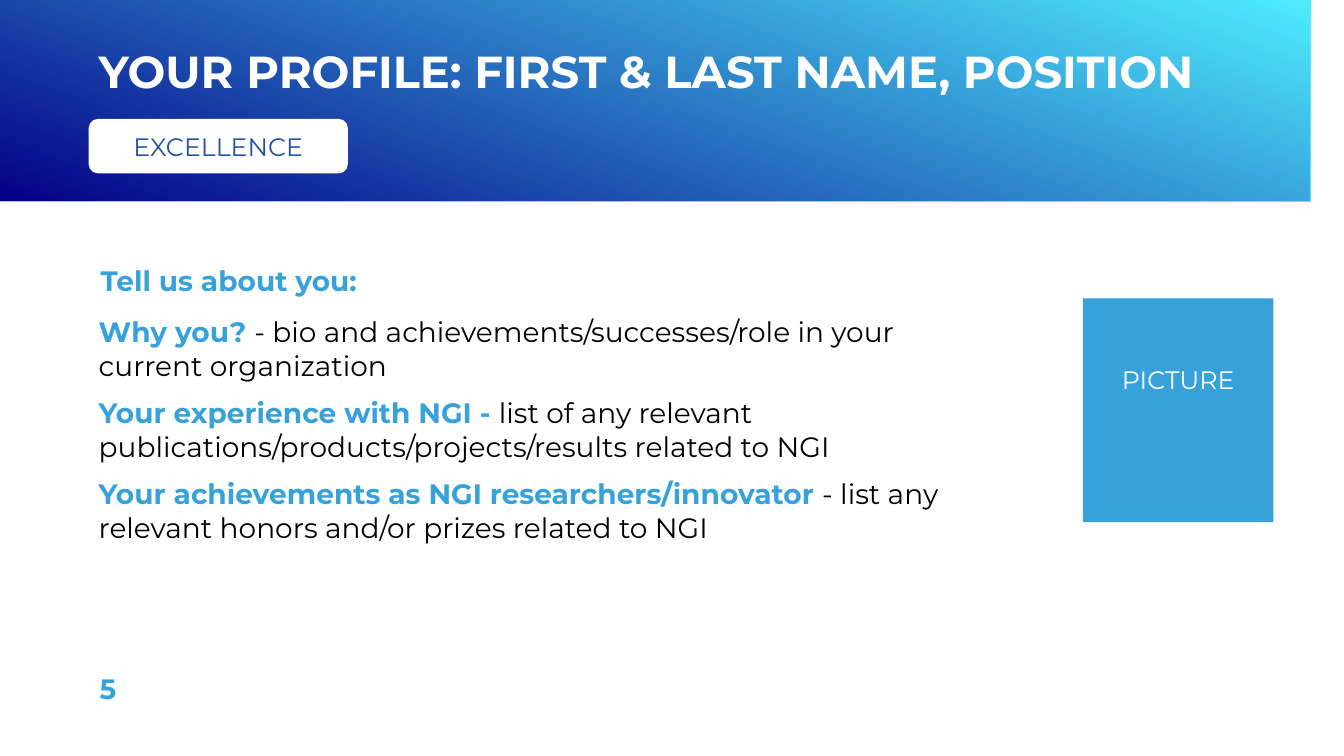
import pptx
import pptx.dml.color
import pptx.enum.shapes
import pptx.enum.text
import pptx.util

Inches = pptx.util.Inches
Pt = pptx.util.Pt
ANCHOR = pptx.enum.text.MSO_ANCHOR
ALIGN = pptx.enum.text.PP_ALIGN
SHAPE = pptx.enum.shapes.MSO_SHAPE

FONT = "Montserrat"
WHITE, BLACK = "FFFFFF", "000000"
SKY, CYAN, NAVY, ROYAL = "37A2D9", "4FECFF", "040086", "2053A6"
SLIDE_WIDTH, SLIDE_HEIGHT = 13.33, 7.5

TOPICS = [
    ("Why you? ", "- bio and achievements/successes/role in your current organization"),
    ("Your experience with NGI - ",
     "list of any relevant publications/products/projects/results related to NGI"),
    ("Your achievements as NGI researchers/innovator ",
     "- list any relevant honors and/or prizes related to NGI"),
]


def color(hex_code):
    """Return the RGB colour for a hex string."""
    return pptx.dml.color.RGBColor.from_string(hex_code)


def style_font(font, size, hex_code, bold=False):
    """Set typeface, size, colour and weight of a font."""
    font.name = FONT
    font.size = Pt(size)
    font.bold = bold
    font.color.rgb = color(hex_code)


def add_text_box(page, box, anchor):
    """Add an empty wrapping text box and return its text frame."""
    frame = page.shapes.add_textbox(*map(Inches, box)).text_frame
    frame.word_wrap = True
    frame.vertical_anchor = anchor
    return frame


def add_line(page, box, text, size, hex_code, anchor):
    """Add a text box holding one bold line."""
    frame = add_text_box(page, box, anchor)
    para = frame.paragraphs[0]
    para.text = text
    style_font(para.font, size, hex_code, True)
    return frame


def add_label(page, preset, box, text, fill, hex_code, anchor):
    """Add a filled shape with a centred label."""
    shape = page.shapes.add_shape(preset, *map(Inches, box))
    shape.shadow.inherit = False
    shape.fill.solid()
    shape.fill.fore_color.rgb = color(fill)
    shape.line.fill.background()
    frame = shape.text_frame
    frame.word_wrap = True
    frame.vertical_anchor = anchor
    para = frame.paragraphs[0]
    para.text = text
    para.alignment = ALIGN.CENTER
    style_font(para.font, 18, hex_code)
    return frame


def add_banner(page, box):
    """Draw the gradient banner with its pointer, title and tag."""
    left, top, width, height = box
    edge = top + 2.06
    tip = top + height
    points = [
        (left, top), (left, edge), (left + 2.18, edge),
        (left + 2.6, tip - 0.01), (left + 2.64, tip), (left + 2.66, tip),
        (left + 2.7, tip - 0.01), (left + 3.11, edge), (left + width, edge),
    ]
    builder = page.shapes.build_freeform(left + width, top, scale=Inches(1))
    builder.add_line_segments(points, close=True)
    banner = builder.convert_to_shape()
    banner.shadow.inherit = False
    banner.fill.gradient()
    banner.fill.gradient_angle = 250
    for stop, hex_code in zip(banner.fill.gradient_stops, (CYAN, NAVY)):
        stop.color.rgb = color(hex_code)
    banner.line.color.rgb = color(CYAN)
    banner.line.width = Pt(0.75)

    add_line(page, (left + 0.88, top - 0.04, 11.56, 1.06),
             "YOUR PROFILE: FIRST & LAST NAME, POSITION", 32, WHITE, ANCHOR.BOTTOM)
    add_label(page, SHAPE.ROUNDED_RECTANGLE, (left + 0.88, top + 1.18, 2.57, 0.54),
              "EXCELLENCE", WHITE, ROYAL, ANCHOR.MIDDLE)


def add_profile(page, box):
    """Write the heading and the topics below it."""
    left, top, width, height = box
    add_line(page, (left + 0.02, top, 11.56, 0.63),
             "Tell us about you:", 20, SKY, ANCHOR.MIDDLE)
    frame = add_text_box(page, (left, top + 0.6, width, height - 0.6), ANCHOR.TOP)
    for index, (lead, detail) in enumerate(TOPICS):
        para = frame.paragraphs[0] if index == 0 else frame.add_paragraph()
        if index:
            para.space_before = Pt(4)
        para.space_after = Pt(6)
        for text, hex_code, bold in ((lead, SKY, True), (detail, BLACK, False)):
            span = para.add_run()
            span.text = text
            style_font(span.font, 20, hex_code, bold)


def add_portrait(page, box):
    """Draw the portrait panel with its label."""
    frame = add_label(page, SHAPE.RECTANGLE, box, "PICTURE", SKY, WHITE, ANCHOR.TOP)
    frame.margin_top = Inches(0.65)


def add_page_number(page, box):
    """Write the page number at the foot of the slide."""
    frame = add_line(page, box, "5", 20, SKY, ANCHOR.BOTTOM)
    frame.margin_bottom = Inches(0.01)


def main():
    """Build the profile slide and save the deck."""
    deck = pptx.Presentation()
    deck.slide_width = Inches(SLIDE_WIDTH)
    deck.slide_height = Inches(SLIDE_HEIGHT)
    page = deck.slides.add_slide(deck.slide_layouts[6])
    add_banner(page, (0, 0, SLIDE_WIDTH, 2.39))
    add_profile(page, (0.88, 2.47, 9.01, 3))
    add_portrait(page, (10.74, 2.96, 1.89, 2.22))
    add_page_number(page, (0.89, 6.61, 0.87, 0.4))
    deck.save("out.pptx")


if __name__ == "__main__":
    main()
